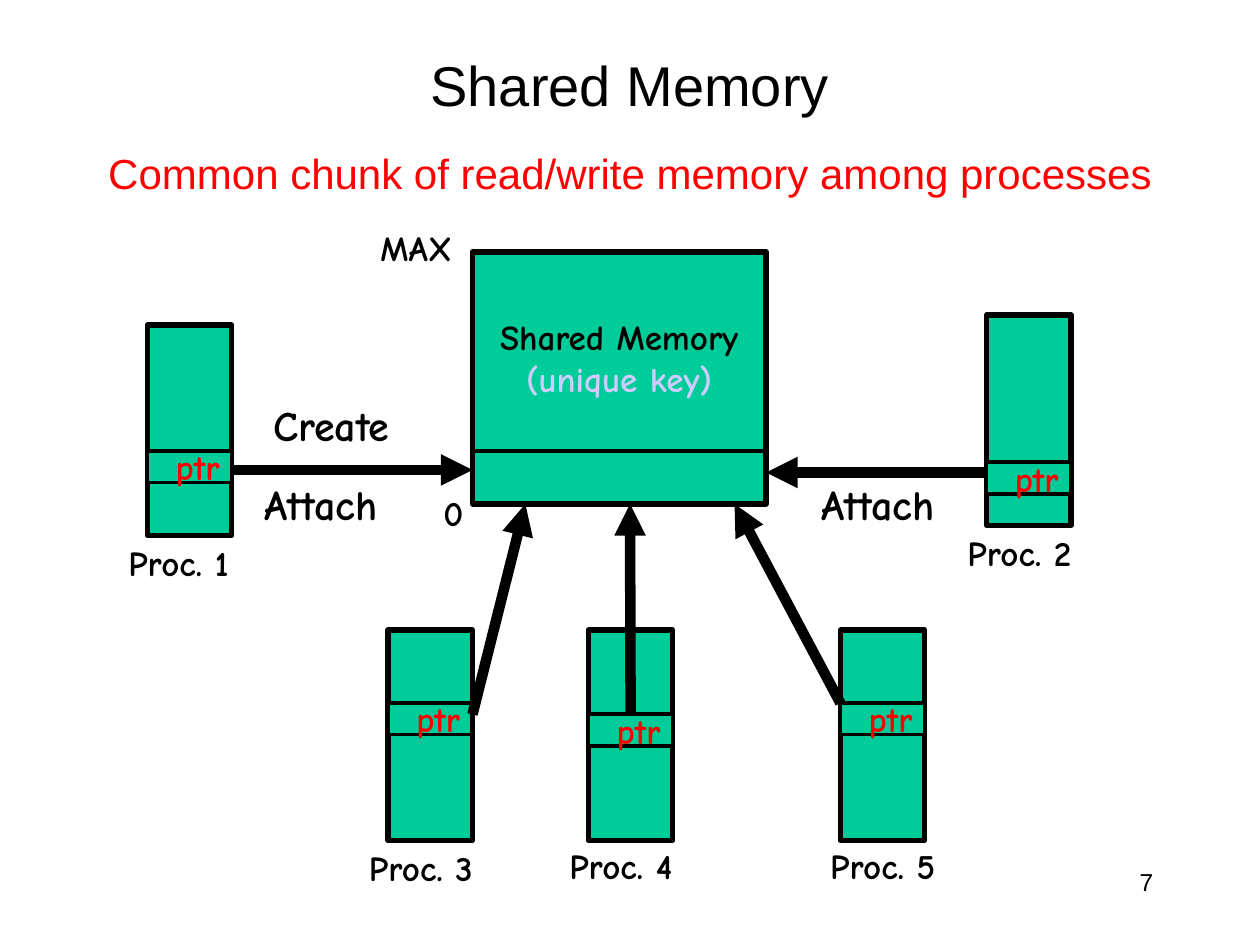
from lxml import etree
from pptx import Presentation
from pptx import util as u
from pptx.dml.color import RGBColor
from pptx.enum import shapes, text
from pptx.oxml.ns import qn

Inches = u.Inches
hues = {"ink": "000000", "red": "FF0000", "green": "00CC99", "lilac": "CCCCFF"}
MID = text.MSO_ANCHOR.MIDDLE
TOP = text.MSO_ANCHOR.TOP
LEFT = text.PP_ALIGN.LEFT
RIGHT = text.PP_ALIGN.RIGHT
CENTER = text.PP_ALIGN.CENTER

deck = Presentation()
deck.slide_width = Inches(10)
deck.slide_height = Inches(7.5)
slide = deck.slides.add_slide(deck.slide_layouts[6])
parts = slide.shapes


def write(shape, words, size, hue="ink", font="Comic Neue", align=LEFT, anchor=TOP, wrap=False):
    frame = shape.text_frame
    frame.text = words
    frame.word_wrap = wrap
    frame.vertical_anchor = anchor
    for para in frame.paragraphs:
        para.alignment = align
        for run in para.runs:
            run.font.size = u.Pt(size)
            run.font.name = font
            run.font.bold = font == "Comic Neue"
            run.font.color.rgb = RGBColor.from_string(hues[hue])
    return frame


def block(left, top, width, height, line):
    shape = parts.add_shape(shapes.MSO_SHAPE.RECTANGLE, Inches(left), Inches(top),
                            Inches(width), Inches(height))
    shape.shadow.inherit = False
    shape.fill.solid()
    shape.fill.fore_color.rgb = RGBColor.from_string(hues["green"])
    shape.line.color.rgb = RGBColor.from_string(hues["ink"])
    shape.line.width = u.Pt(line)
    return shape


heads = [
    ("Shared Memory", 0.75, 0.25, 8.5, 0.83, 32, "ink", CENTER, MID),
    ("Common chunk of read/write memory among processes",
     0.25, 1.17, 9.5, 0.5, 24, "red", CENTER, TOP),
    ("7", 7.17, 6.83, 2.08, 0.5, 14, "ink", RIGHT, TOP),
]
for words, left, top, width, height, size, hue, align, anchor in heads:
    box = parts.add_textbox(Inches(left), Inches(top), Inches(width), Inches(height))
    frame = write(box, words, size, hue, "Arial", align, anchor, True)
    if hue == "red":
        frame.paragraphs[0].line_spacing = 0.9

procs = [
    (1.17, 2.58, 3.58, 0.92, 4.25),
    (7.83, 2.5, 3.67, 7.58, 4.17),
    (3.08, 5, 5.58, 2.83, 6.67),
    (4.67, 5, 5.67, 4.42, 6.65),
    (6.67, 5, 5.58, 6.49, 6.65),
]
labels = [
    ("Attach", 6.42, 3.75, 1.33, 0.5, 24),
    ("Attach", 2, 3.75, 1.33, 0.5, 24),
    ("Create", 2.07, 3.12, 1.28, 0.5, 24),
    ("0", 3.42, 3.85, 0.37, 0.43, 20),
    ("MAX", 2.92, 1.75, 0.85, 0.43, 20),
]
slots = []
for num, (left, top, slot, side, base) in enumerate(procs, 1):
    block(left, top, 0.67, 1.67, 3)
    ptr = block(left, slot, 0.67, 0.25, 2.25)
    write(ptr, "ptr", 20, "red", align=RIGHT, anchor=MID)
    slots.append(ptr)
    labels.append((f"Proc. {num}", side, base, 1.18, 0.43, 20))

store = block(3.75, 2, 2.33, 2, 3)
frame = write(store, "Shared Memory\n(unique key)", 20, align=CENTER, anchor=MID)
frame.margin_bottom = Inches(0.38)
frame.paragraphs[1].runs[0].font.color.rgb = RGBColor.from_string(hues["lilac"])

lines = [
    (1.83, 3.73, 3.75, 3.73, 6),
    (7.83, 3.75, 6.08, 3.75, 6),
    (3.75, 5.67, 4.17, 4, 6),
    (5, 5.67, 5, 4, 6),
    (6.67, 5.58, 5.83, 4, 6),
    (3.75, 3.58, 6.08, 3.58, 2.25),
]
for x1, y1, x2, y2, width in lines:
    link = parts.add_connector(shapes.MSO_CONNECTOR.STRAIGHT, Inches(x1), Inches(y1),
                               Inches(x2), Inches(y2))
    if x1 == x2:
        link.begin_connect(slots[3], 0)
    link.line.color.rgb = RGBColor.from_string(hues["ink"])
    link.line.width = u.Pt(width)
    if width == 6:
        etree.SubElement(link.line._get_or_add_ln(), qn("a:tailEnd"), type="triangle")
    etree.SubElement(link._element.spPr, qn("a:effectLst"))

for words, left, top, width, height, size in labels:
    box = parts.add_textbox(Inches(left), Inches(top), Inches(width), Inches(height))
    write(box, words, size)

deck.save("out.pptx")
